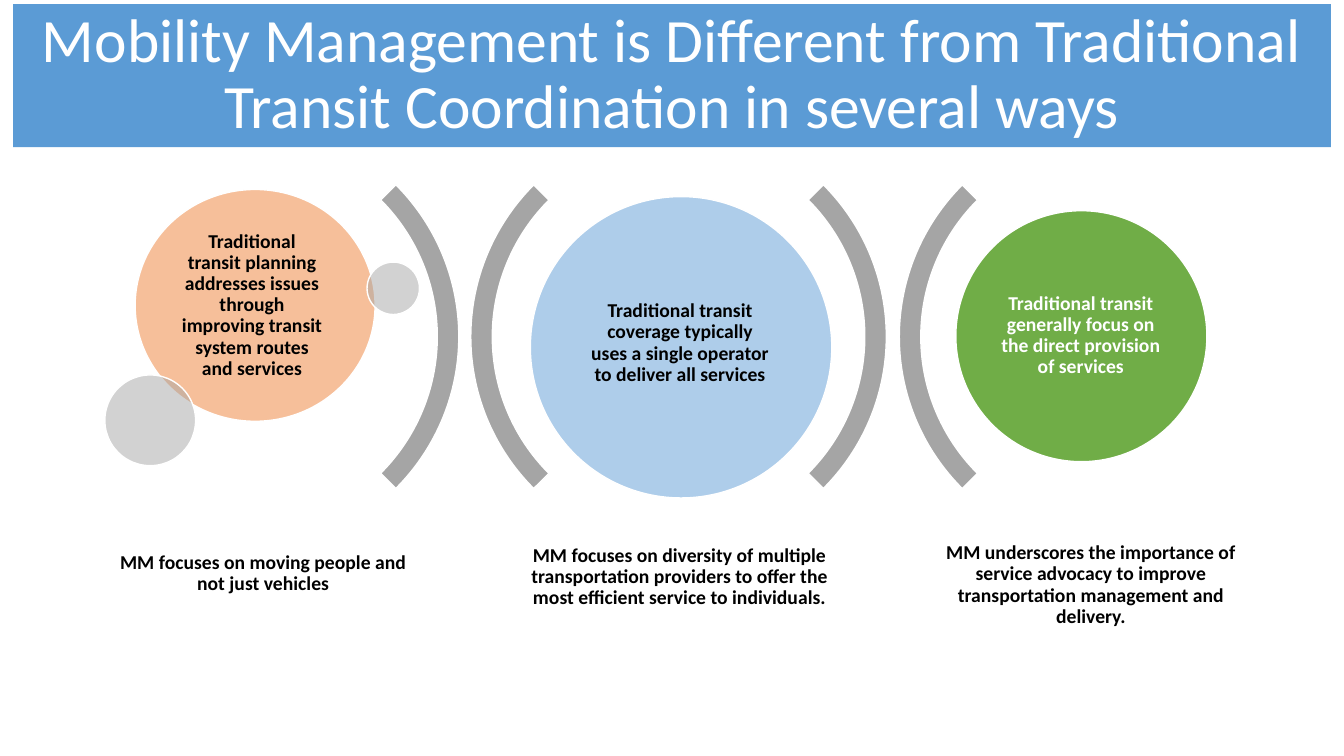
from lxml.etree import SubElement
from pptx import Presentation
from pptx.dml.color import RGBColor
from pptx.enum.shapes import MSO_SHAPE
from pptx.enum.text import MSO_ANCHOR, MSO_AUTO_SIZE, PP_ALIGN
from pptx.oxml.ns import qn
from pptx.util import Inches, Pt

BLUE = RGBColor(0x5B, 0x9B, 0xD5)
ORANGE = RGBColor(0xED, 0x7D, 0x31)
GREEN = RGBColor(0x70, 0xAD, 0x47)
GRAY = RGBColor(0xA5, 0xA5, 0xA5)
BLACK = RGBColor(0, 0, 0)
WHITE = RGBColor(255, 255, 255)
ARC_SIZE = 4.26
ARC_TOP = 1.21


def write_text(frame, text, size, color, bold, side_inset, top_inset):
    frame.word_wrap = True
    frame.auto_size = MSO_AUTO_SIZE.NONE
    frame.vertical_anchor = MSO_ANCHOR.MIDDLE
    frame.margin_left = frame.margin_right = Inches(side_inset)
    frame.margin_top = frame.margin_bottom = Inches(top_inset)
    para = frame.paragraphs[0]
    para.alignment = PP_ALIGN.CENTER
    para.line_spacing = 0.9
    span = para.add_run()
    span.text = text
    span.font.name = "Calibri"
    span.font.size = Pt(size)
    span.font.bold = bold
    span.font.color.rgb = color


def add_title(page, box, text):
    title = page.shapes.title
    title.left, title.top, title.width, title.height = map(Inches, box)
    title.fill.solid()
    title.fill.fore_color.rgb = BLUE
    write_text(title.text_frame, text, 44, WHITE, False, 0.1, 0.05)


def add_label(page, box, text, color=BLACK, inset=0.06):
    label = page.shapes.add_textbox(*map(Inches, box))
    write_text(label.text_frame, text, 14, color, True, inset, inset)


def add_outlined(page, kind, box, color, opacity=100):
    shape = page.shapes.add_shape(kind, *map(Inches, box))
    shape.shadow.inherit = False
    shape.fill.solid()
    shape.fill.fore_color.rgb = color
    shape.line.color.rgb = WHITE
    shape.line.width = Pt(1)
    if opacity < 100:
        fill_color = shape.fill._xPr.find(qn("a:solidFill"))[0]
        SubElement(fill_color, qn("a:alpha")).set("val", str(opacity * 1000))
    return shape


def add_bracket_pair(page, left, gap):
    for arc_left, rotation in ((left, 90), (left + gap, 270)):
        box = (arc_left, ARC_TOP, ARC_SIZE, ARC_SIZE)
        arc = add_outlined(page, MSO_SHAPE.BLOCK_ARC, box, GRAY)
        arc.rotation = rotation
        for index, value in enumerate((135, 189, 0.05)):
            arc.adjustments[index] = value


def add_circle(page, box, color, opacity=100):
    add_outlined(page, MSO_SHAPE.OVAL, box, color, opacity)


def add_planning(page, left, top):
    add_circle(page, (left + 0.3, top, 2.38, 2.3), ORANGE, 49)
    add_label(page, (left + 0.69, top + 0.39, 1.54, 1.52),
              "Traditional transit planning addresses issues through "
              "improving transit system routes and services")
    add_circle(page, (left, top + 1.84, 0.9, 0.9), GRAY, 49)
    add_circle(page, (left + 2.6, top + 0.72, 0.52, 0.52), GRAY, 49)
    add_label(page, (left - 0.05, top + 3.19, 3.24, 1.24),
              "MM focuses on moving people and not just vehicles")


def add_coverage(page, left, top):
    add_circle(page, (left, top, 2.99, 2.99), BLUE, 49)
    add_label(page, (left + 0.59, top + 0.26, 1.79, 2.39),
              "Traditional transit coverage typically uses a single "
              "operator to deliver all services", inset=0)
    add_label(page, (left - 0.14, top + 3.35, 3.24, 0.85),
              "MM focuses on diversity of multiple transportation providers "
              "to offer the most efficient service to individuals.")


def add_provision(page, left, top):
    add_circle(page, (left, top, 2.49, 2.49), GREEN)
    add_label(page, (left + 0.36, top + 0.36, 1.76, 1.76),
              "Traditional transit generally focus on the direct provision "
              "of services", WHITE)
    add_label(page, (left - 0.28, top + 3.29, 3.24, 0.85),
              "MM underscores the importance of service advocacy to improve "
              "transportation management and delivery.")


def main():
    deck = Presentation()
    deck.slide_width = Inches(13.33)
    deck.slide_height = Inches(7.5)
    page = deck.slides.add_slide(deck.slide_layouts[5])
    add_title(page, (0.13, 0.04, 13.07, 1.42),
              "Mobility Management is Different from Traditional "
              "Transit Coordination in several ways")
    add_bracket_pair(page, 0.29, 4.38)
    add_bracket_pair(page, 4.53, 4.39)
    add_coverage(page, 5.26, 1.95)
    add_planning(page, 1.04, 1.88)
    add_provision(page, 9.48, 2.09)
    deck.save("out.pptx")


if __name__ == "__main__":
    main()
